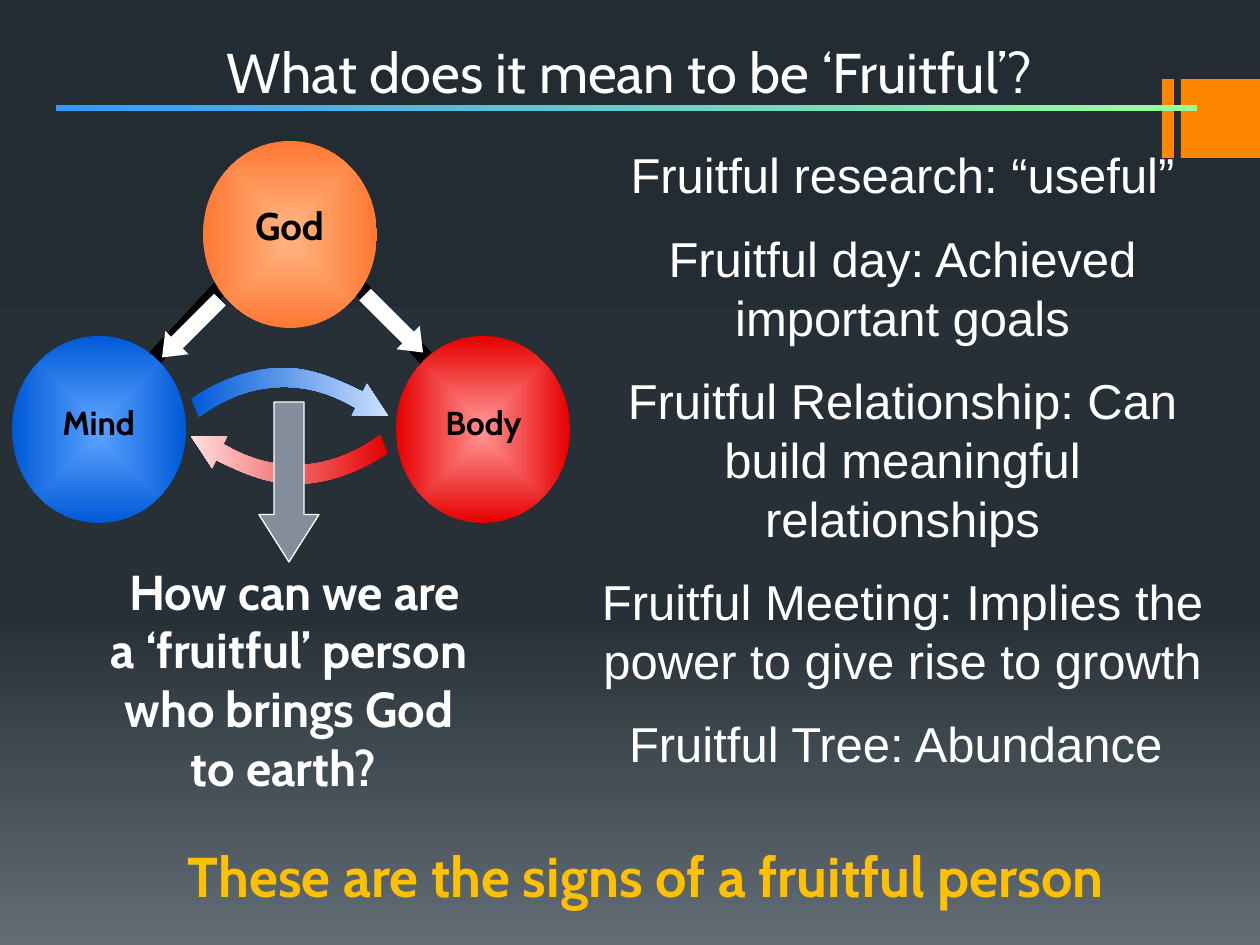
from copy import deepcopy
from dataclasses import dataclass

from lxml import etree
from pptx import Presentation
from pptx import util as u
from pptx.dml.color import RGBColor
from pptx.enum import shapes, text
from pptx.oxml.ns import qn

SCALE = 914400 / 126
SHAPE = shapes.MSO_SHAPE


@dataclass(frozen=True)
class Theme:
    heading: str = "Cabin"
    body: str = "Arial"
    white: str = "FFFFFF"
    black: str = "000000"
    gold: str = "FFC000"
    accent: str = "FF8600"
    grey: str = "838D9B"
    backdrop: tuple = ((0, "242C33"), (65, "273037"), (100, "636D76"))
    rule: tuple = ((0, "3399FF"), (100, "99FF99"))
    god: tuple = ((0, "FFB482"), (100, "FF7832"))
    mind: tuple = ((0, "5AA0FF"), (100, "005AD7"))
    body_circle: tuple = ((0, "FF9191"), (100, "E60000"))
    mind_to_body: tuple = ((0, "005AD7"), (100, "CBE1FF"))
    body_to_mind: tuple = ((0, "E60000"), (100, "FFDFDF"))
    title_size: int = 32
    text_size: int = 28
    god_size: int = 22
    label_size: int = 19


T = Theme()


def px(n):
    return u.Emu(round(n * SCALE))


def rgb(value):
    return RGBColor.from_string(value)


def set_gradient(fill, element, stops, angle=0, from_center=False):
    fill.gradient()
    fill.gradient_angle = angle
    grad = element.find(".//" + qn("a:gradFill"))
    gs_list = grad.find(qn("a:gsLst"))
    for _ in stops[2:]:
        gs_list.append(deepcopy(gs_list[-1]))
    for stop, (position, color) in zip(fill.gradient_stops, stops):
        stop.position = position / 100
        stop.color.rgb = rgb(color)
    if from_center:
        lin = grad.find(qn("a:lin"))
        center = etree.Element(qn("a:path"), path="shape")
        etree.SubElement(center, qn("a:fillToRect"), l="50000", t="50000", r="50000", b="50000")
        grad.replace(lin, center)


def paint(sp, fill, line=None, from_center=False):
    sp.shadow.inherit = False
    if isinstance(fill, tuple):
        set_gradient(sp.fill, sp.element, fill, from_center=from_center)
    else:
        sp.fill.solid()
        sp.fill.fore_color.rgb = rgb(fill)
    if line:
        sp.line.color.rgb = rgb(line)
        sp.line.width = u.Pt(0.75)
    else:
        sp.line.fill.background()


def add_shape(s, kind, box, fill, line=None, rotation=0, adj=(), from_center=False):
    sp = s.shapes.add_shape(kind, *map(px, box))
    for i, value in enumerate(adj):
        sp.adjustments[i] = value
    sp.rotation = rotation
    paint(sp, fill, line, from_center)


def add_line(s, start, end):
    sp = s.shapes.add_connector(shapes.MSO_CONNECTOR.STRAIGHT, *map(px, start + end))
    sp.line.color.rgb = rgb(T.black)
    sp.line.width = u.Pt(9)
    etree.SubElement(sp.element.spPr, qn("a:effectLst"))


def curve_segments(sp):
    segments = list(sp.element.iter(qn("a:lnTo")))
    for first, second, third in zip(segments[::3], segments[1::3], segments[2::3]):
        curve = etree.Element(qn("a:cubicBezTo"))
        first.addprevious(curve)
        for segment in (first, second, third):
            curve.append(segment[0])
            segment.getparent().remove(segment)


def add_curved_arrow(s, left, top, fill, rotation=0):
    controls = [
        (30, 11), (63, 0), (93, 0),
        (123, 0), (151, 14), (172, 24),
        (174, 20), (176, 16), (176, 16),
        (176, 16), (197, 48), (197, 48),
        (197, 48), (161, 48), (161, 48),
        (161, 48), (163, 43), (165, 40),
        (141, 26), (118, 19), (93, 19),
        (68, 19), (40, 26), (8, 49),
        (8, 49), (0, 31), (0, 31),
    ]
    builder = s.shapes.build_freeform(0, 31, scale=SCALE)
    builder.add_line_segments(controls, close=True)
    sp = builder.convert_to_shape(px(left), px(top))
    curve_segments(sp)
    sp.rotation = rotation
    paint(sp, fill)


def write(sp, lines, size, color, font=T.heading, bold=False, insets=(13, 6, 13, 6),
          anchor=text.MSO_ANCHOR.TOP, gap=0):
    tf = sp.text_frame
    tf.word_wrap = True
    tf.auto_size = text.MSO_AUTO_SIZE.NONE
    tf.vertical_anchor = anchor
    tf.margin_left, tf.margin_top, tf.margin_right, tf.margin_bottom = map(px, insets)
    tf.text = "\n".join(lines)
    for i, p in enumerate(tf.paragraphs):
        p.alignment = text.PP_ALIGN.CENTER
        p.space_before = u.Pt(gap if i else 0)
        p.font.name = font
        p.font.size = u.Pt(size)
        p.font.bold = bold
        p.font.color.rgb = rgb(color)


def add_text(s, box, lines, size, color, **style):
    write(s.shapes.add_textbox(*map(px, box)), lines, size, color, **style)


def add_title(s, box, title):
    sp = s.shapes.title
    sp.left, sp.top, sp.width, sp.height = map(px, box)
    write(sp, [title], T.title_size, T.white, anchor=text.MSO_ANCHOR.MIDDLE)


def add_circle(s, left, top, fill):
    add_shape(s, SHAPE.OVAL, (left, top, 174, 187), fill, from_center=True)


def add_diagram(s):
    for x in (498, 83):
        add_line(s, (x, 435), (290, 213))
    add_circle(s, 12, 336, T.mind)
    add_curved_arrow(s, 191, 368, T.mind_to_body)
    add_curved_arrow(s, 191, 435, T.body_to_mind, rotation=180)
    add_circle(s, 396, 336, T.body_circle)
    add_circle(s, 203, 141, T.god)
    for label, x in (("Mind", 19), ("Body", 404)):
        add_text(s, (x, 393, 158, 71), [label], T.label_size, T.black, bold=True, insets=(6, 9, 5, 6))
    add_text(s, (203, 198, 173, 72), ["God"], T.god_size, T.black, bold=True, insets=(13, 4, 13, 6))
    add_text(s, (97, 561, 384, 243), [" How can we are a ‘fruitful’ person who brings God to earth? "],
             T.text_size, T.white, bold=True, insets=(5, 0, 5, 6))


def main():
    prs = Presentation()
    prs.slide_width, prs.slide_height = px(1260), px(945)
    s = prs.slides.add_slide(prs.slide_layouts[5])
    set_gradient(s.background.fill, s.element, T.backdrop, angle=270)

    for x, width in ((1162, 12), (1181, 79)):
        add_shape(s, SHAPE.RECTANGLE, (x, 79, width, 79), T.accent)
    add_title(s, (0, 0, 1260, 142), "What does it mean to be ‘Fruitful’?")
    add_diagram(s)
    add_text(s, (570, 139, 665, 755), [
        "Fruitful research: “useful”",
        "Fruitful day: Achieved important goals",
        "Fruitful Relationship: Can build meaningful relationships",
        "Fruitful Meeting: Implies the power to give rise to growth",
        "Fruitful Tree: Abundance ",
    ], T.text_size, T.white, font=T.body, gap=14)
    add_shape(s, SHAPE.RECTANGLE, (56, 105, 1141, 6), T.rule)
    add_shape(s, SHAPE.DOWN_ARROW, (259, 402, 60, 160), T.grey, line=T.white, adj=(0.5, 0.79))
    add_text(s, (134, 842, 1012, 74), [" These are the signs of a fruitful person"],
             T.title_size, T.gold, bold=True, insets=(5, 0, 5, 6))
    for x, y, rotation in ((150, 312, 315), (353, 307, 225)):
        add_shape(s, SHAPE.LEFT_ARROW, (x, y, 82, 33), T.white, rotation=rotation, adj=(0.5, 0.64))
    prs.save("out.pptx")


if __name__ == "__main__":
    main()
